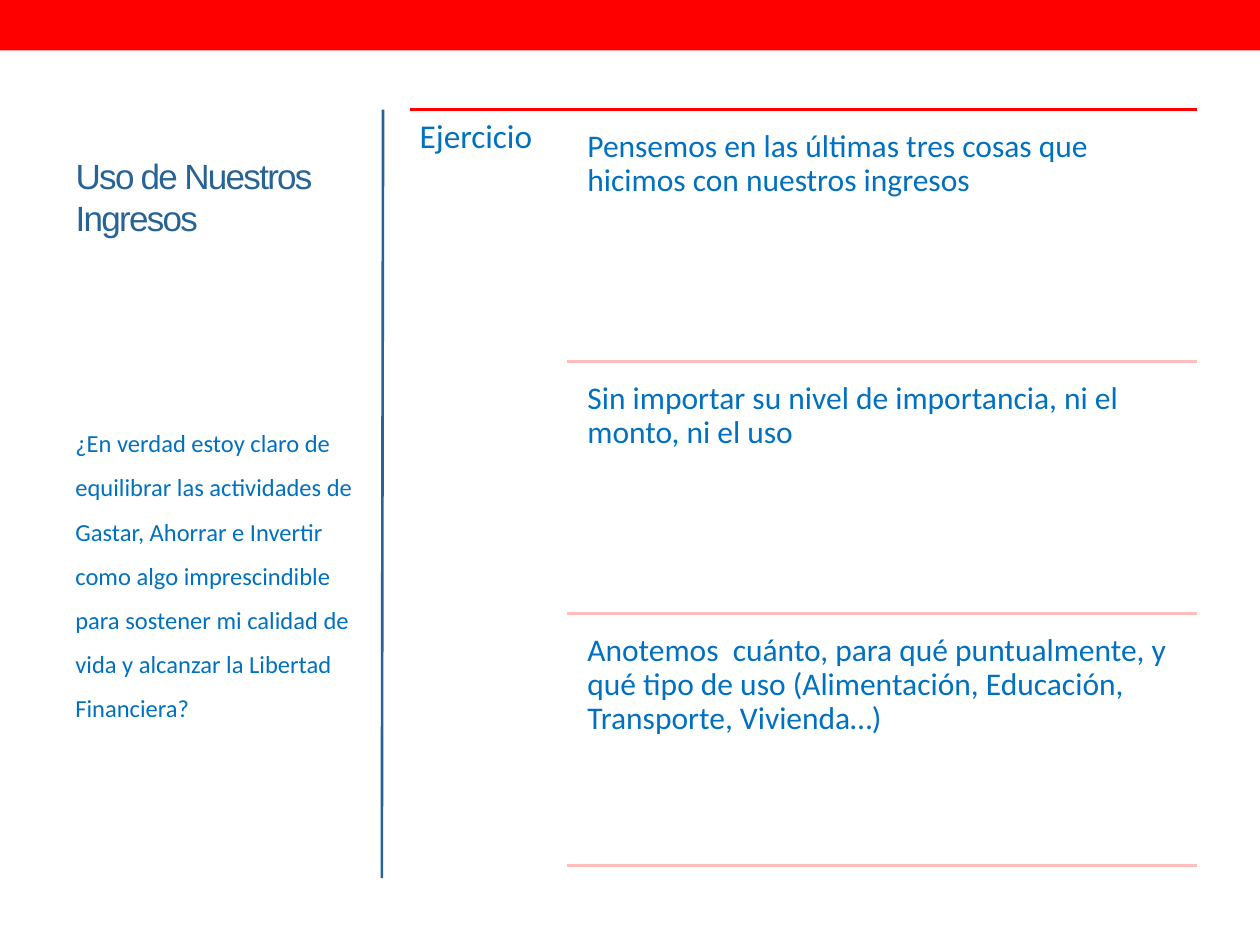
from dataclasses import dataclass

from lxml.etree import SubElement
from pptx import Presentation
from pptx.dml.color import RGBColor
from pptx.enum.shapes import MSO_CONNECTOR, MSO_SHAPE
from pptx.enum.text import MSO_ANCHOR, MSO_AUTO_SIZE, PP_ALIGN
from pptx.oxml.ns import qn
from pptx.util import Pt

COLORS = {"red": "FF0000", "pink": "FFBDBD", "navy": "286395", "blue": "0070C0"}

ROW_TOP, ROW_STEP = 69.3, 144
ROW_LEFT, RIGHT = 324, 684
STEPS = [
    "Pensemos en las últimas tres cosas que hicimos con nuestros ingresos",
    "Sin importar su nivel de importancia, ni el monto, ni el uso",
    "Anotemos  cuánto, para qué puntualmente, y qué tipo de uso "
    "(Alimentación, Educación, Transporte, Vivienda…)",
]
QUESTION = (
    "¿En verdad estoy claro de equilibrar las actividades de Gastar, Ahorrar e "
    "Invertir como algo imprescindible para sostener mi calidad de vida y "
    "alcanzar la Libertad Financiera?"
)


@dataclass
class Box:
    left: float
    top: float
    width: float
    height: float


@dataclass
class Rule:
    x1: float
    y1: float
    x2: float
    y2: float
    color: str
    weight: float = 2.08


@dataclass
class Label:
    text: str
    box: Box
    size: float
    inset: float
    spacing: float = 0.9
    font: str = "Calibri"
    color: str = "blue"
    anchor: MSO_ANCHOR = MSO_ANCHOR.TOP


def rgb(name: str) -> RGBColor:
    return RGBColor.from_string(COLORS[name])


def draw_rule(shapes, rule: Rule) -> None:
    ln = shapes.add_connector(
        MSO_CONNECTOR.STRAIGHT, Pt(rule.x1), Pt(rule.y1), Pt(rule.x2), Pt(rule.y2)
    )
    ln.line.color.rgb = rgb(rule.color)
    ln.line.width = Pt(rule.weight)
    SubElement(ln._element.spPr, qn("a:effectLst"))


def fill_label(sp, label: Label) -> None:
    box = label.box
    sp.left, sp.top = Pt(box.left), Pt(box.top)
    sp.width, sp.height = Pt(box.width), Pt(box.height)
    tf = sp.text_frame
    tf.text = label.text
    tf.word_wrap = True
    tf.auto_size = MSO_AUTO_SIZE.NONE
    tf.vertical_anchor = label.anchor
    tf.margin_left = tf.margin_right = Pt(label.inset)
    tf.margin_top = tf.margin_bottom = Pt(label.inset)
    p = tf.paragraphs[0]
    p.alignment = PP_ALIGN.LEFT
    p.line_spacing = label.spacing
    r = p.runs[0]
    r.font.name = label.font
    r.font.size = Pt(label.size)
    r.font.color.rgb = rgb(label.color)


def add_label(shapes, label: Label):
    sp = shapes.add_textbox(0, 0, 0, 0)
    fill_label(sp, label)
    return sp


def main() -> None:
    prs = Presentation()
    prs.slide_width, prs.slide_height = Pt(720), Pt(540)
    s = prs.slides.add_slide(prs.slide_layouts[5])
    shapes = s.shapes

    band = shapes.add_shape(MSO_SHAPE.RECTANGLE, 0, 0, Pt(720), Pt(28.8))
    band.shadow.inherit = False
    band.fill.solid()
    band.fill.fore_color.rgb = rgb("red")
    band.line.fill.background()

    draw_rule(shapes, Rule(218.9, 62.6, 218.2, 501.8, "navy", 1.5))

    title = shapes.title
    fill_label(title, Label(
        "Uso de Nuestros Ingresos", Box(36, 62.6, 168.5, 99.4), 20, 7.2,
        spacing=1.0, font="Arial", color="navy", anchor=MSO_ANCHOR.MIDDLE,
    ))
    title.text_frame.paragraphs[0].runs[0].font._element.set("spc", "-100")

    draw_rule(shapes, Rule(234, 62.6, RIGHT, 62.6, "red"))
    add_label(shapes, Label("Ejercicio", Box(234, 62.6, 90, 439.2), 19, 5.8))

    for i, text in enumerate(STEPS):
        top = ROW_TOP + i * ROW_STEP
        add_label(shapes, Label(text, Box(330.7, top, 353.3, 137.5), 18, 5))
        y = top + 137.3
        draw_rule(shapes, Rule(ROW_LEFT, y, RIGHT, y, "pink"))

    question = add_label(shapes, Label(
        QUESTION, Box(36, 167.8, 177.8, 334), 14, 7.2,
        spacing=1.5, anchor=MSO_ANCHOR.MIDDLE,
    ))
    question.text_frame.margin_top = Pt(3.6)
    question.text_frame.margin_bottom = Pt(24)

    prs.save("out.pptx")


if __name__ == "__main__":
    main()
